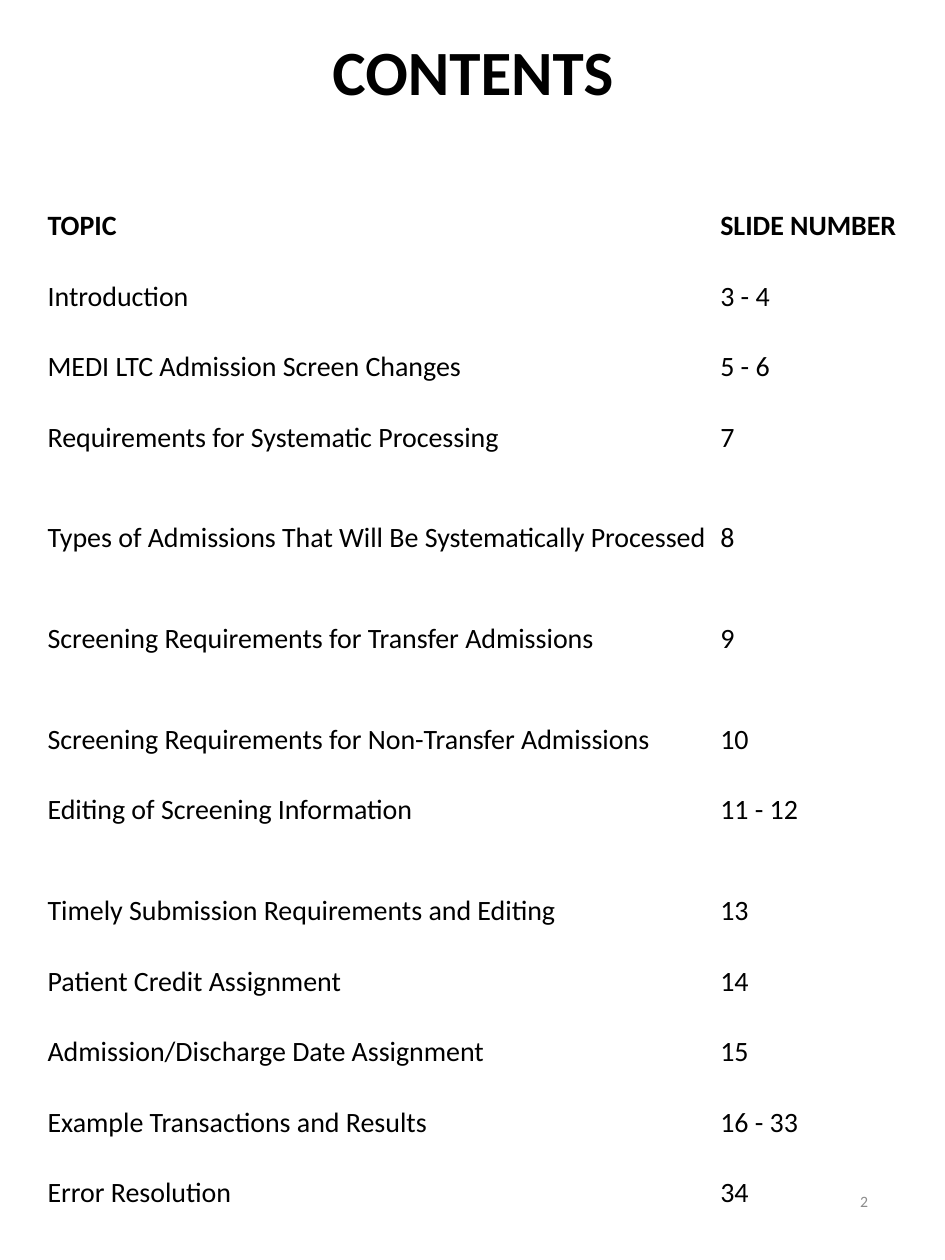
from typing import NamedTuple

from lxml.etree import SubElement
from pptx import Presentation
from pptx.dml.color import RGBColor
from pptx.enum.text import MSO_ANCHOR as Anchor, PP_ALIGN as Align
from pptx.oxml.ns import qn
from pptx.util import Cm, Pt

COLORS = {"text": "000000", "page_number": "8C8C8C"}
FONT = "Calibri"
TOPIC_SIZE = 16
ROW_HEIGHT, TALL_ROW_HEIGHT = Cm(0.71), Cm(1.32)
COLUMN_WIDTHS = (Cm(13.56), Cm(3.96))


class Entry(NamedTuple):
    topic: str
    slides: str
    tall: bool = False
    bold: bool = False


ENTRIES = [
    Entry("TOPIC", "SLIDE NUMBER", tall=True, bold=True),
    Entry("Introduction", "3 - 4"),
    Entry("MEDI LTC Admission Screen Changes", "5 - 6"),
    Entry("Requirements for Systematic Processing", "7"),
    Entry("Types of Admissions That Will Be Systematically Processed", "8", tall=True),
    Entry("Screening Requirements for Transfer Admissions", "9", tall=True),
    Entry("Screening Requirements for Non-Transfer Admissions", "10", tall=True),
    Entry("Editing of Screening Information", "11 - 12"),
    Entry("Timely Submission Requirements and Editing", "13", tall=True),
    Entry("Patient Credit Assignment", "14"),
    Entry("Admission/Discharge Date Assignment", "15"),
    Entry("Example Transactions and Results", "16 - 33"),
    Entry("Error Resolution", "34"),
]


def add_run(paragraph, text: str, size: float, color: str = "text", bold: bool = False) -> None:
    run = paragraph.add_run()
    run.text = text
    run.font.name = FONT
    run.font.size = Pt(size)
    run.font.bold = bold
    run.font.color.rgb = RGBColor.from_string(COLORS[color])


def place(shape, left: float, top: float, width: float, height: float) -> None:
    """Position a shape, in centimetres."""
    shape.left, shape.top, shape.width, shape.height = map(Cm, (left, top, width, height))


def fill_cell(cell, text: str, bold: bool) -> None:
    cell.fill.background()
    cell.vertical_anchor = Anchor.BOTTOM
    cell.margin_left = cell.margin_right = cell.margin_top = Cm(0.02)
    cell.margin_bottom = 0
    paragraph = cell.text_frame.paragraphs[0]
    if text:
        add_run(paragraph, text, TOPIC_SIZE, bold=bold)
    else:
        # The end mark's size sets the height of an empty row.
        SubElement(paragraph._p, qn("a:endParaRPr"), sz=str(TOPIC_SIZE * 100))


def add_title(slide) -> None:
    title = slide.shapes.title
    place(title, 1.32, 0.51, 16.43, 2.01)
    title.text_frame.vertical_anchor = Anchor.MIDDLE
    paragraph = title.text_frame.paragraphs[0]
    paragraph.alignment = Align.CENTER
    paragraph.line_spacing = 0.9
    add_run(paragraph, "CONTENTS", 36, bold=True)


def add_contents(slide, entries: list[Entry]) -> None:
    """Draw one row per entry, each followed by a spacer row."""
    rows = [row for entry in entries for row in (entry, Entry("", ""))]
    frame = slide.shapes.add_table(
        len(rows), len(COLUMN_WIDTHS), Cm(0.94), Cm(3.58), sum(COLUMN_WIDTHS), ROW_HEIGHT * len(rows))
    table = frame.table
    table.first_row = table.horz_banding = False
    for column, width in zip(table.columns, COLUMN_WIDTHS):
        column.width = width
    for table_row, entry in zip(table.rows, rows):
        table_row.height = TALL_ROW_HEIGHT if entry.tall else ROW_HEIGHT
        for cell, text in zip(table_row.cells, (entry.topic, entry.slides)):
            fill_cell(cell, text, entry.bold)


def add_page_number(slide, number: str) -> None:
    page_number = slide.shapes.add_textbox(0, 0, 0, 0)
    place(page_number, 13.46, 23.55, 4.29, 1.35)
    page_number.text_frame.word_wrap = True
    page_number.text_frame.vertical_anchor = Anchor.MIDDLE
    paragraph = page_number.text_frame.paragraphs[0]
    paragraph.alignment = Align.RIGHT
    add_run(paragraph, number, 9, "page_number")


def main() -> None:
    presentation = Presentation()
    presentation.slide_width, presentation.slide_height = Cm(19.05), Cm(25.4)
    slide = presentation.slides.add_slide(presentation.slide_layouts[5])
    add_title(slide)
    add_contents(slide, ENTRIES)
    add_page_number(slide, "2")
    presentation.save("out.pptx")


if __name__ == "__main__":
    main()
